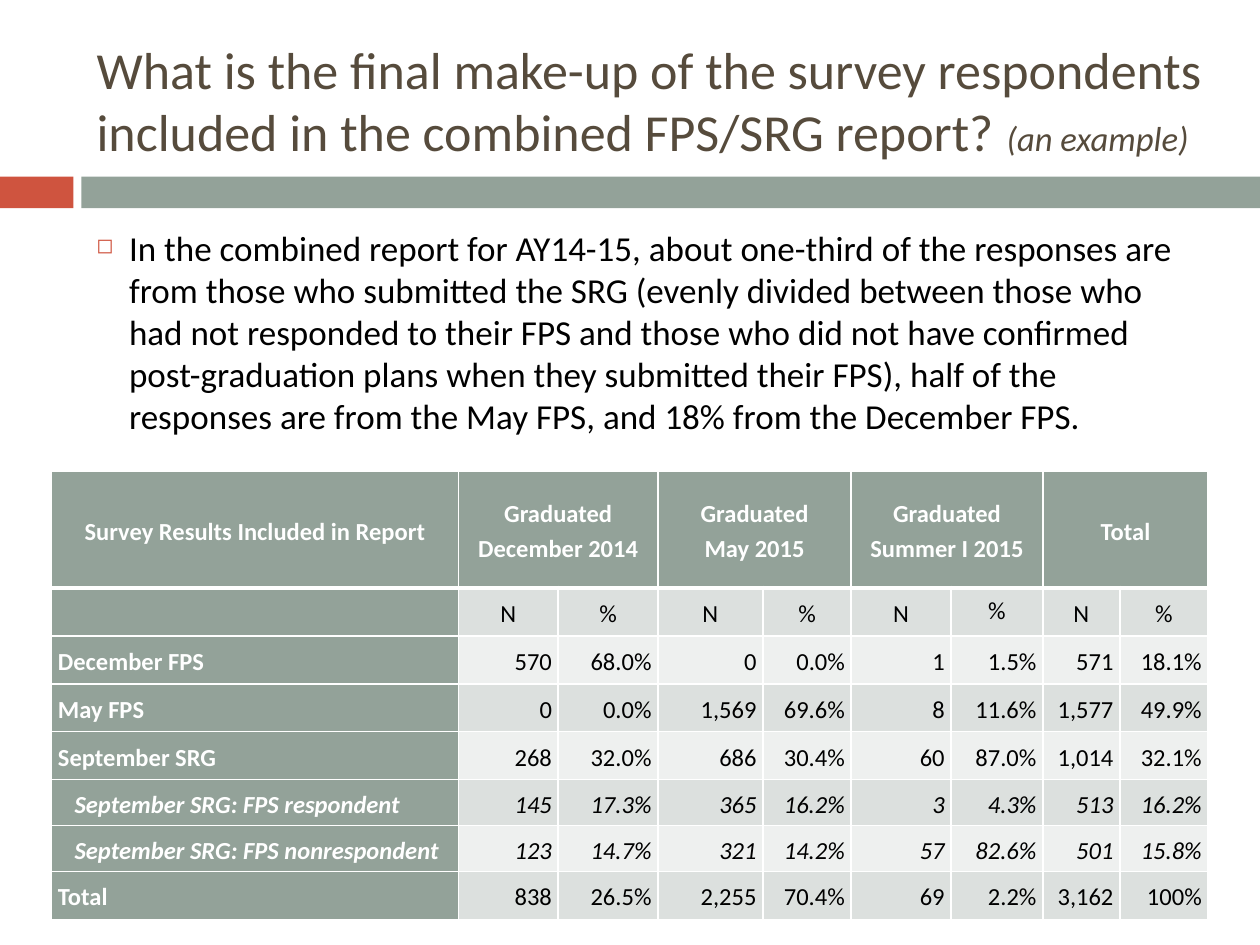
from dataclasses import dataclass

from lxml import etree
from pptx import Presentation
from pptx.dml.color import RGBColor
from pptx.enum.shapes import MSO_SHAPE
from pptx.enum.text import MSO_ANCHOR, MSO_AUTO_SIZE, PP_ALIGN
from pptx.oxml.ns import qn
from pptx.util import Pt

RECTANGLE = MSO_SHAPE.RECTANGLE
TOP, MIDDLE = MSO_ANCHOR.TOP, MSO_ANCHOR.MIDDLE
LEFT, CENTER, RIGHT = PP_ALIGN.LEFT, PP_ALIGN.CENTER, PP_ALIGN.RIGHT
NO_AUTOFIT = MSO_AUTO_SIZE.NONE

FONT = "Calibri"
WHITE, BLACK, BROWN = "FFFFFF", "000000", "564B3C"
RED, SAGE = "CF543F", "93A299"
DARK_BAND, LIGHT_BAND = "DCE0DE", "EEF0EF"

TITLE = ("What is the final make-up of the survey respondents "
         "included in the combined FPS/SRG report? ")
TITLE_NOTE = "(an example)"
SUMMARY = (
    "In the combined report for AY14-15, about one-third of the responses are "
    "from those who submitted the SRG (evenly divided between those who had not "
    "responded to their FPS and those who did not have confirmed post-graduation "
    "plans when they submitted their FPS), half of the responses are from the "
    "May FPS, and 18% from the December FPS."
)

COLUMN_WIDTHS = [232.5, 57, 57, 60, 50.5, 57, 52.5, 44, 50.5]
HEADER_HEIGHT, ROW_HEIGHT, SUB_ROW_HEIGHT = 67, 27.4, 26.2
ROW_TITLE = "Survey Results Included in Report"
GROUPS = ["Graduated\vDecember 2014", "Graduated\vMay 2015",
          "Graduated\vSummer I 2015", "Total"]


@dataclass
class Band:
    left: float
    width: float
    color: str


@dataclass
class ResultRow:
    label: str
    values: list[str]
    is_sub_row: bool = False


@dataclass
class CellStyle:
    fill: str
    color: str = BLACK
    align: PP_ALIGN = RIGHT
    bold: bool = False
    italic: bool = False
    indent: float = 0
    anchor: MSO_ANCHOR = MIDDLE
    top_line: float = 1
    bottom_line: float = 1


BANDS = [Band(0, 42, RED), Band(46.5, 673.5, SAGE)]
RESULTS = [
    ResultRow("December FPS",
              ["570", "68.0%", "0", "0.0%", "1", "1.5%", "571", "18.1%"]),
    ResultRow("May FPS",
              ["0", "0.0%", "1,569", "69.6%", "8", "11.6%", "1,577", "49.9%"]),
    ResultRow("September SRG",
              ["268", "32.0%", "686", "30.4%", "60", "87.0%", "1,014", "32.1%"]),
    ResultRow("September SRG: FPS respondent",
              ["145", "17.3%", "365", "16.2%", "3", "4.3%", "513", "16.2%"], True),
    ResultRow("September SRG: FPS nonrespondent",
              ["123", "14.7%", "321", "14.2%", "57", "82.6%", "501", "15.8%"], True),
    ResultRow("Total",
              ["838", "26.5%", "2,255", "70.4%", "69", "2.2%", "3,162", "100%"]),
]


def rgb(color: str) -> RGBColor:
    return RGBColor.from_string(color)


def format_run(run, size: float, color: str, bold=False, italic=False) -> None:
    run.font.name = FONT
    run.font.size = Pt(size)
    run.font.color.rgb = rgb(color)
    run.font.bold = bold
    run.font.italic = italic


def add_band(slide, band: Band) -> None:
    shape = slide.shapes.add_shape(
        RECTANGLE, Pt(band.left), Pt(101), Pt(band.width), Pt(18))
    shape.shadow.inherit = False
    shape.fill.solid()
    shape.fill.fore_color.rgb = rgb(band.color)
    shape.line.fill.background()


def set_title(slide) -> None:
    title = slide.shapes.title
    title.left, title.top, title.width, title.height = Pt(48), Pt(18), Pt(653), Pt(78)
    frame = title.text_frame
    frame.auto_size = NO_AUTOFIT
    frame.vertical_anchor = MIDDLE
    frame.text = TITLE
    paragraph = frame.paragraphs[0]
    paragraph.alignment = LEFT
    paragraph.add_run().text = TITLE_NOTE
    main_run, note_run = paragraph.runs
    format_run(main_run, 29.7, BROWN)
    format_run(note_run, 19.8, BROWN, italic=True)


def add_bullet(paragraph, character: str, color: str, percent: int, indent: float) -> None:
    properties = paragraph._p.get_or_add_pPr()
    properties.set("marL", str(Pt(indent)))
    properties.set("indent", str(-Pt(indent)))
    bullet_color = etree.SubElement(properties, qn("a:buClr"))
    etree.SubElement(bullet_color, qn("a:srgbClr"), val=color)
    etree.SubElement(properties, qn("a:buSzPct"), val=str(percent * 1000))
    etree.SubElement(properties, qn("a:buChar"), char=character)


def add_summary(slide) -> None:
    box = slide.shapes.add_textbox(Pt(48), Pt(126), Pt(642), Pt(414))
    frame = box.text_frame
    frame.word_wrap = True
    frame.text = SUMMARY
    paragraph = frame.paragraphs[0]
    paragraph.space_before = Pt(5.2)
    add_bullet(paragraph, "◻", RED, 60, 18.7)
    format_run(paragraph.runs[0], 20, BLACK)


def set_border(cell, side: str, width: float) -> None:
    line = etree.SubElement(
        cell._tc.get_or_add_tcPr(), qn(f"a:{side}"), w=str(Pt(width)))
    fill = etree.SubElement(line, qn("a:solidFill"))
    etree.SubElement(fill, qn("a:srgbClr"), val=WHITE)


def fill_cell(cell, text: str, style: CellStyle) -> None:
    borders = {"lnL": 1, "lnR": 1, "lnT": style.top_line, "lnB": style.bottom_line}
    for side, width in borders.items():
        set_border(cell, side, width)
    cell.fill.solid()
    cell.fill.fore_color.rgb = rgb(style.fill)
    cell.vertical_anchor = style.anchor
    cell.margin_left = cell.margin_right = Pt(3.6)
    cell.margin_top = cell.margin_bottom = Pt(2)
    if not text:
        return
    cell.text_frame.text = text
    paragraph = cell.text_frame.paragraphs[0]
    paragraph.alignment = style.align
    paragraph.line_spacing = 1.15
    if style.indent:
        paragraph._p.get_or_add_pPr().set("marL", str(Pt(style.indent)))
    for run in paragraph.runs:
        format_run(run, 14, style.color, style.bold, style.italic)


def fill_header_rows(table) -> None:
    header = CellStyle(SAGE, WHITE, CENTER, bold=True, bottom_line=3)
    fill_cell(table.cell(0, 0), ROW_TITLE, header)
    fill_cell(table.cell(1, 0), "", CellStyle(SAGE, top_line=3))
    for index, group in enumerate(GROUPS):
        column = 1 + 2 * index
        first, second = table.cell(0, column), table.cell(0, column + 1)
        first.merge(second)
        fill_cell(first, group, header)
        fill_cell(second, "", header)
        for offset, unit in enumerate(["N", "%"]):
            anchor = TOP if column + offset == 6 else MIDDLE
            fill_cell(table.cell(1, column + offset), unit,
                      CellStyle(DARK_BAND, align=CENTER, anchor=anchor, top_line=3))


def add_results_table(slide) -> None:
    heights = [HEADER_HEIGHT, ROW_HEIGHT] + [
        SUB_ROW_HEIGHT if result.is_sub_row else ROW_HEIGHT for result in RESULTS]
    table = slide.shapes.add_table(
        len(heights), len(COLUMN_WIDTHS), Pt(29.5), Pt(269),
        Pt(sum(COLUMN_WIDTHS)), Pt(sum(heights))).table
    table.first_col = True
    for column, width in zip(table.columns, COLUMN_WIDTHS):
        column.width = Pt(width)
    for row, height in zip(table.rows, heights):
        row.height = Pt(height)

    fill_header_rows(table)
    for row_index, result in enumerate(RESULTS, start=2):
        italic = result.is_sub_row
        band_color = DARK_BAND if row_index % 2 else LIGHT_BAND
        fill_cell(table.cell(row_index, 0), result.label,
                  CellStyle(SAGE, WHITE, LEFT, bold=True, italic=italic,
                            indent=9.5 if italic else 0))
        for column_index, value in enumerate(result.values, start=1):
            fill_cell(table.cell(row_index, column_index), value,
                      CellStyle(band_color, italic=italic))


def main() -> None:
    presentation = Presentation()
    presentation.slide_width, presentation.slide_height = Pt(720), Pt(540)
    slide = presentation.slides.add_slide(presentation.slide_layouts[5])
    for band in BANDS:
        add_band(slide, band)
    set_title(slide)
    add_summary(slide)
    add_results_table(slide)
    presentation.save("out.pptx")


if __name__ == "__main__":
    main()
